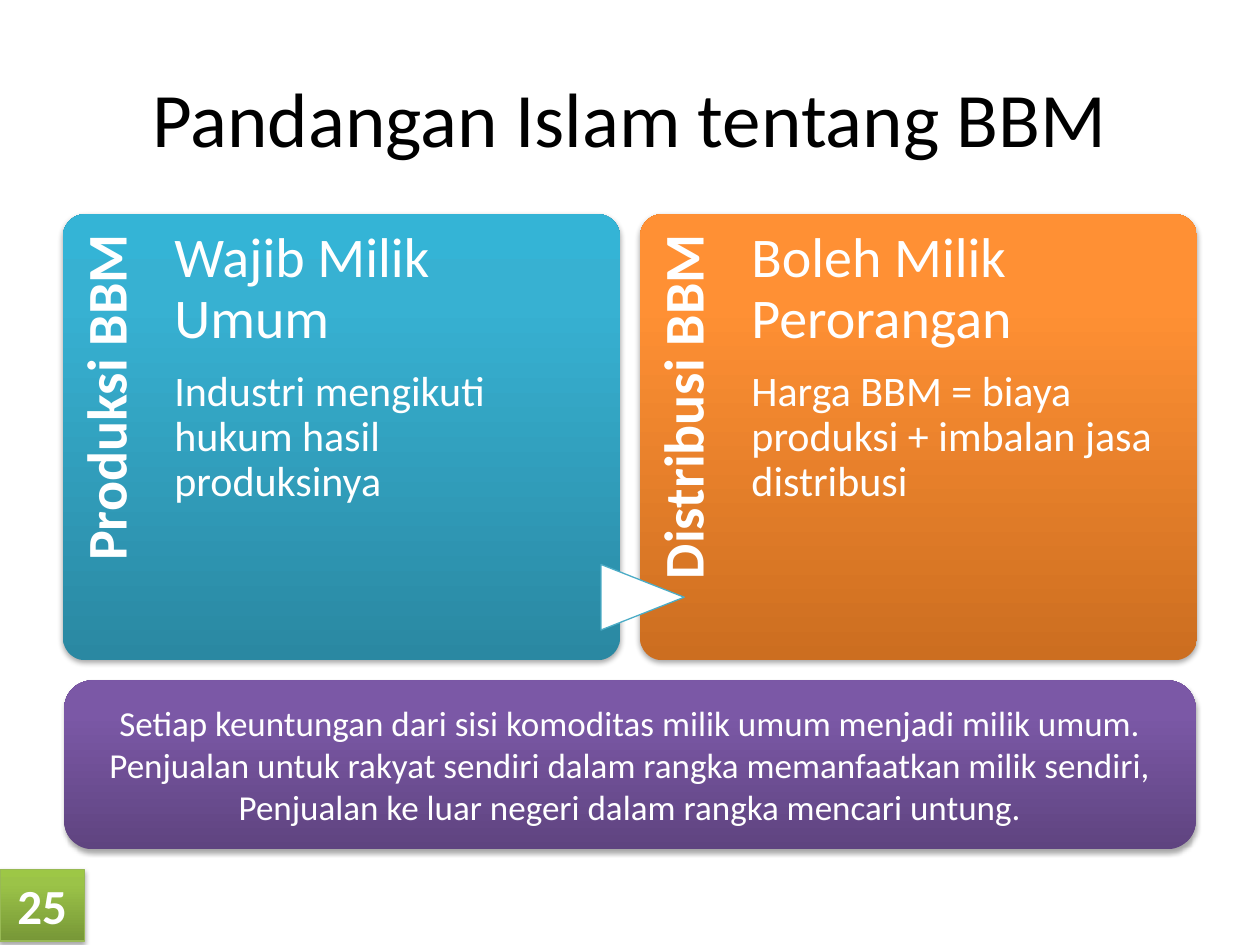
"""Build the slide on the Islamic view of fuel ownership."""
import pptx
import pptx.dml.color
import pptx.enum.shapes
import pptx.enum.text
import pptx.oxml.ns
import pptx.util
from lxml import etree

RGB = pptx.dml.color.RGBColor
KIND = pptx.enum.shapes.MSO_SHAPE
ALIGN = pptx.enum.text.PP_ALIGN
ANCHOR = pptx.enum.text.MSO_ANCHOR
Inches, Pt, qn = pptx.util.Inches, pptx.util.Pt, pptx.oxml.ns.qn

WHITE = RGB(0xFF, 0xFF, 0xFF)
BLACK = RGB(0x00, 0x00, 0x00)
AQUA = RGB(0x4B, 0xAC, 0xC6)
LEAF = RGB(0x98, 0xB9, 0x55)
BLUE = RGB(0x2A, 0x88, 0xA2), RGB(0x37, 0xB1, 0xD2), RGB(0x34, 0xB4, 0xD6)
ORANGE = RGB(0xCC, 0x6E, 0x20), RGB(0xFF, 0x90, 0x34), RGB(0xFF, 0x91, 0x36)
GREEN = RGB(0x77, 0x97, 0x37), RGB(0x9B, 0xC3, 0x48), RGB(0x9D, 0xC7, 0x46)
PURPLE = RGB(0x5F, 0x44, 0x80), RGB(0x7B, 0x58, 0xA6), RGB(0x7C, 0x57, 0xA8)

TITLE = "Pandangan Islam tentang BBM"
PANELS = [
    ("Produksi BBM", BLUE, "Wajib Milik Umum",
     "Industri mengikuti hukum hasil produksinya"),
    ("Distribusi BBM", ORANGE, "Boleh Milik Perorangan",
     "Harga BBM = biaya produksi + imbalan jasa distribusi"),
]
NOTES = [
    "Setiap keuntungan dari sisi komoditas milik umum menjadi milik umum.",
    "Penjualan untuk rakyat sendiri dalam rangka memanfaatkan milik sendiri, "
    "Penjualan ke luar negeri dalam rangka mencari untung.",
]
PAGE = "25"

WIDE, HIGH = 10, 7.5
EDGE, GAP, TOP, TALL = 0.5, 0.16, 1.7, 3.54
SPAN = (WIDE - 2 * EDGE - GAP * (len(PANELS) - 1)) / len(PANELS)
TAB, RUN = SPAN / 5, 2.91
STOPS = 0, 80, 100
BOX = dict(word_wrap=True, margin_left=0, margin_top=Inches(0.12),
           margin_right=0, margin_bottom=0)
SIDE = dict(BOX, margin_right=Inches(0.16))
MID = dict(word_wrap=True, vertical_anchor=ANCHOR.MIDDLE)


def put(item, values):
    for name, value in values.items():
        setattr(item, name, value)


def place(*box):
    return [Inches(part) for part in box]


def write(shape, lines, frame, align=ALIGN.LEFT, color=WHITE, bold=False, tight=False):
    text = shape.text_frame
    put(text, frame)
    text.text = "\n".join(line for line, size in lines)
    for para, (line, size) in zip(text.paragraphs, lines):
        para.alignment = align
        font = para.runs[0].font
        put(font, dict(name="Calibri", size=Pt(size), bold=bold))
        font.color.rgb = color
        if tight:
            para.line_spacing = 0.9
            after = etree.SubElement(para._p.get_or_add_pPr(), qn("a:spcAft"))
            etree.SubElement(after, qn("a:spcPct"), val="35000")


def shade(shape, tones):
    shape.fill.gradient()
    grad = shape._element.spPr.find(qn("a:gradFill"))
    stops = grad.find(qn("a:gsLst"))
    for stop in list(stops):
        stops.remove(stop)
    for spot, tone in zip(STOPS, tones):
        stop = etree.SubElement(stops, qn("a:gs"), pos=str(spot * 1000))
        etree.SubElement(stop, qn("a:srgbClr"), val=str(tone))
    shape.fill.gradient_angle = 90


def cast(shape):
    glow = shape._element.spPr.find(qn("a:effectLst"))
    drop = etree.SubElement(glow, qn("a:outerShdw"), blurRad=str(Pt(3.1)),
                            dist=str(Pt(1.8)), dir="5400000", rotWithShape="0")
    tone = etree.SubElement(drop, qn("a:srgbClr"), val=str(BLACK))
    etree.SubElement(tone, qn("a:alpha"), val="35000")


def draw(slide, kind, box, fill, line=None):
    shape = slide.shapes.add_shape(kind, *place(*box))
    shape.shadow.inherit = False
    if line:
        shape.line.color.rgb = line
        shape.line.width = Pt(0.75)
    else:
        shape.line.fill.background()
    if isinstance(fill, RGB):
        shape.fill.solid()
        shape.fill.fore_color.rgb = fill
    else:
        shade(shape, fill)
        cast(shape)
    return shape


def panel(slide, left, name, tones, head, body):
    card = draw(slide, KIND.ROUNDED_RECTANGLE, (left, TOP, SPAN, TALL), tones)
    card.adjustments[0] = 0.05
    side = slide.shapes.add_textbox(
        *place(left + (TAB - RUN) / 2, TOP + (RUN - TAB) / 2, RUN, TAB))
    side.rotation = 270
    write(side, [(name, 32)], SIDE, ALIGN.RIGHT, bold=True, tight=True)
    main = slide.shapes.add_textbox(*place(left + TAB, TOP, 3.29, TALL))
    write(main, [(head, 32), (body, 24)], BOX, tight=True)


def main():
    deck = pptx.Presentation()
    put(deck, dict(slide_width=Inches(WIDE), slide_height=Inches(HIGH)))
    slide = deck.slides.add_slide(deck.slide_layouts[5])
    title = slide.shapes.title
    spot = place(EDGE, 0.3, WIDE - 2 * EDGE, 1.25)
    put(title, dict(zip(("left", "top", "width", "height"), spot)))
    write(title, [(TITLE, 44)], MID, ALIGN.CENTER, BLACK)
    for col, row in enumerate(PANELS):
        panel(slide, EDGE + col * (SPAN + GAP), *row)
    arrow = draw(slide, KIND.FLOWCHART_EXTRACT, (4.84, 4.41, 0.52, 0.66), WHITE, AQUA)
    arrow.rotation = 90
    badge = draw(slide, KIND.RECTANGLE, (0, 6.9, 0.67, 0.57), GREEN, LEAF)
    write(badge, [(PAGE, 28)], MID, ALIGN.CENTER, bold=True)
    note = draw(slide, KIND.ROUNDED_RECTANGLE, (0.51, 5.4, 8.98, 1.34), PURPLE)
    write(note, [(line, 20) for line in NOTES], MID, ALIGN.CENTER)
    deck.save("out.pptx")


if __name__ == "__main__":
    main()
